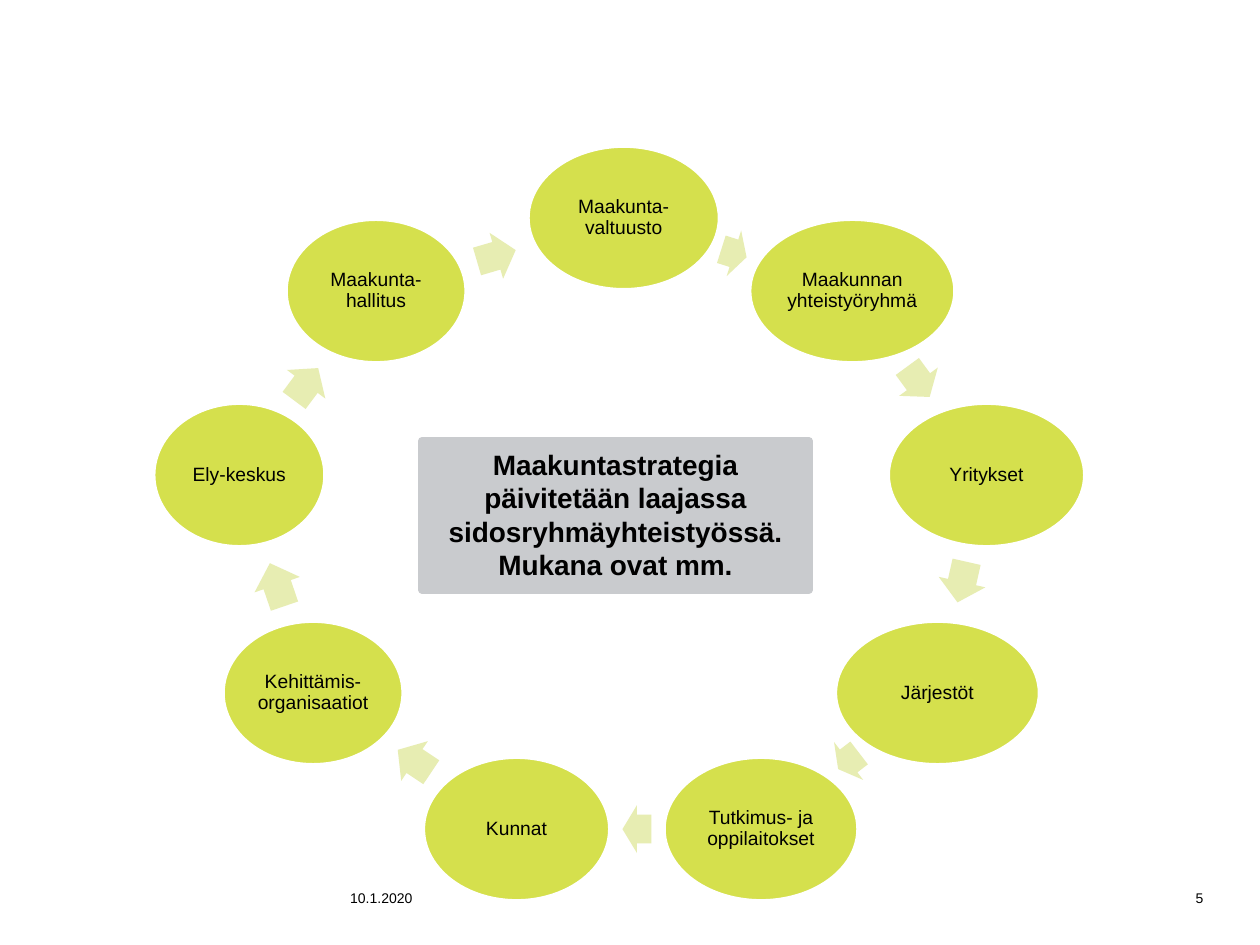
from pptx import Presentation
from pptx.dml.color import RGBColor
from pptx.enum.shapes import MSO_SHAPE as Kind
from pptx.enum.text import MSO_ANCHOR as Anchor, PP_ALIGN as Align
from pptx.util import Inches, Pt

LIME, PALE, GREY, WHITE, BLACK = "D5E04D", "E7EDB2", "C9CBCE", "FFFFFF", "000000"
NODE_HIGH, ARROW_HIGH = 1.14, 0.38
NODES = [
    ("Maakunta-valtuusto", 2.97, 0, 1.52),
    ("Maakunnan yhteistyöryhmä", 4.73, 0.58, 1.63),
    ("Yritykset", 5.83, 2.04, 1.56),
    ("Järjestöt", 5.41, 3.77, 1.62),
    ("Tutkimus- ja oppilaitokset", 4.05, 4.85, 1.54),
    ("Kunnat", 2.14, 4.85, 1.48),
    ("Kehittämis-organisaatiot", 0.55, 3.77, 1.43),
    ("Ely-keskus", 0, 2.04, 1.36),
    ("Maakunta-hallitus", 1.05, 0.58, 1.43),
]
ARROWS = [
    (4.5, 0.66, 0.21, 17.6),
    (5.92, 1.68, 0.3, 53.8),
    (6.25, 3.27, 0.33, 102.7),
    (5.41, 4.69, 0.21, 142.4),
    (3.72, 5.23, 0.23, 180),
    (1.91, 4.69, 0.32, 213.8),
    (0.8, 3.29, 0.36, 251.2),
    (1.05, 1.7, 0.32, 306.7),
    (2.56, 0.68, 0.32, 343.6),
]


def paint(target, color):
    target.solid()
    target.fore_color.rgb = RGBColor.from_string(color)


def draw(slide, kind, box, color, edge=None, width=0):
    shape = slide.shapes.add_shape(kind, *map(Inches, box))
    shape.shadow.inherit = False
    paint(shape.fill, color)
    if edge:
        paint(shape.line.fill, edge)
        shape.line.width = Pt(width)
    else:
        shape.line.fill.background()
    return shape


def write(shape, text, size, align=Align.CENTER, anchor=Anchor.MIDDLE, bold=False):
    frame = shape.text_frame
    frame.word_wrap = True
    frame.vertical_anchor = anchor
    para = frame.paragraphs[0]
    para.text = text
    para.alignment = align
    font = para.font
    font.name, font.size, font.bold = "Arial", Pt(size), bold
    paint(font.fill, BLACK)
    return frame


def add_ring(slide, left, top):
    for text, x, y, wide in NODES:
        box = (left + x, top + y, wide, NODE_HIGH)
        node = draw(slide, Kind.OVAL, box, LIME, WHITE, 2)
        frame = write(node, text, 11)
        frame.margin_left = frame.margin_right = Inches(0.02)
        frame.margin_top = frame.margin_bottom = Inches(0.02)
        frame.paragraphs[0].line_spacing = 0.9
    for x, y, wide, turn in ARROWS:
        box = (left + x, top + y, wide, ARROW_HIGH)
        arrow = draw(slide, Kind.RIGHT_ARROW, box, PALE)
        arrow.adjustments[0], arrow.adjustments[1] = 0.6, 0.5
        arrow.rotation = turn


def add_center(slide, box):
    panel = draw(slide, Kind.RECTANGLE, box, GREY, GREY, 4.5)
    text = "Maakuntastrategia päivitetään laajassa sidosryhmäyhteistyössä. Mukana ovat mm."
    write(panel, text, 16, anchor=Anchor.TOP, bold=True)


def add_footer(slide, left, top):
    parts = [("10.1.2020", 0, 1.48, Align.LEFT), ("5", 5.57, 1.4, Align.RIGHT)]
    for text, x, wide, align in parts:
        box = (left + x, top, wide, 0.24)
        write(slide.shapes.add_textbox(*map(Inches, box)), text, 8, align)


def main():
    deck = Presentation()
    deck.slide_width, deck.slide_height = Inches(10), Inches(7.5)
    slide = deck.slides.add_slide(deck.slide_layouts[6])
    add_ring(slide, 1.22, 1.16)
    add_footer(slide, 2.68, 7.01)
    add_center(slide, (3.35, 3.5, 3.07, 1.18))
    deck.save("out.pptx")


if __name__ == "__main__":
    main()
